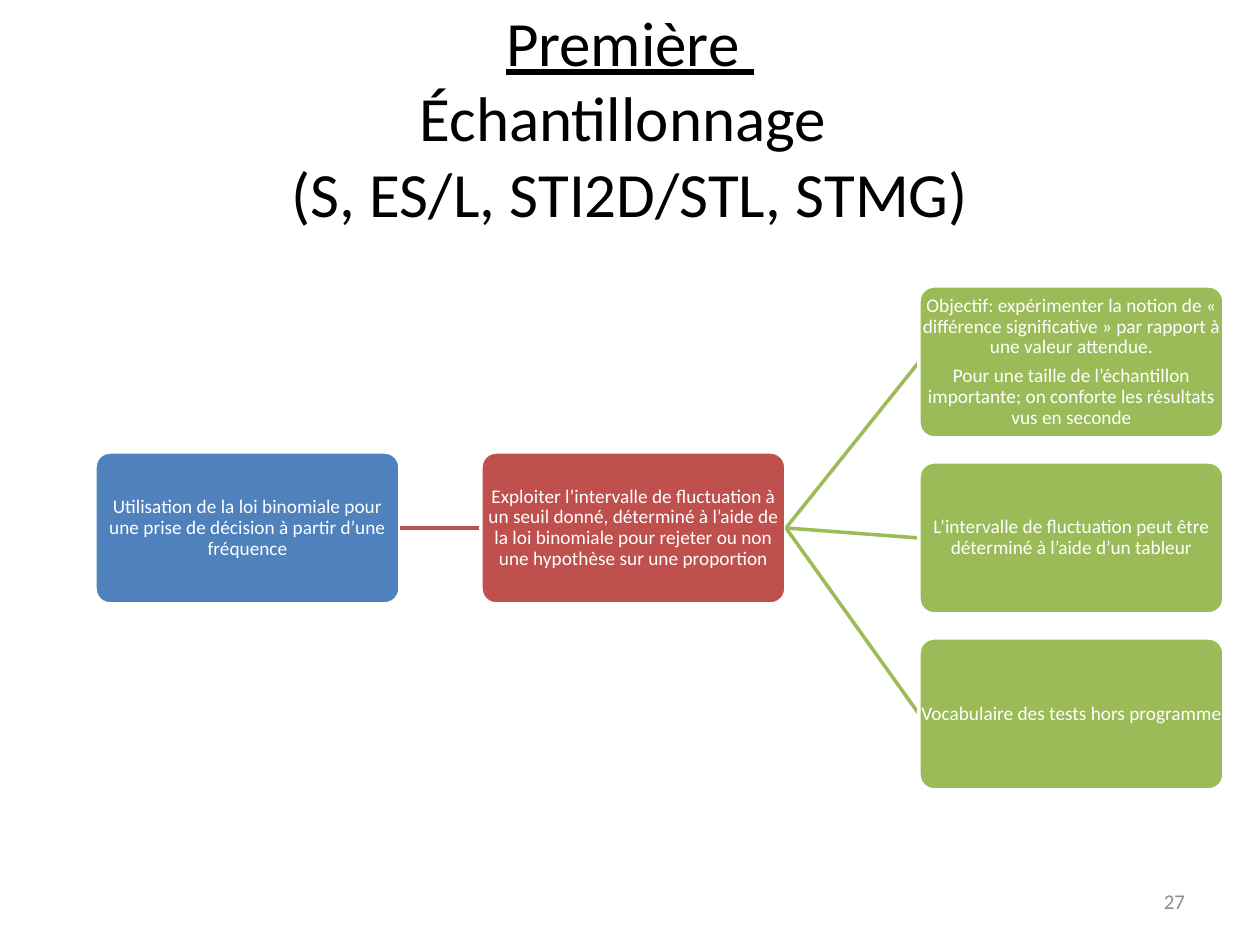
import dataclasses

import pptx
import pptx.dml.color
import pptx.enum.shapes
import pptx.enum.text
import pptx.oxml
import pptx.oxml.ns
import pptx.util

PX = 914400 / 126
BOX_WIDTH, BOX_HEIGHT = 305, 152
ROOT_LEFT, METHOD_LEFT, DETAIL_LEFT = 95, 481, 919
MAIN_TOP, DETAIL_TOP, DETAIL_PITCH = 452, 286, 176

ROOT = ["Utilisation de la loi binomiale pour une prise de décision à partir d’une fréquence"]
METHOD = [
    "Exploiter l’intervalle de fluctuation à un seuil donné, déterminé à l’aide de "
    "la loi binomiale pour rejeter ou non une hypothèse sur une proportion"
]
DETAILS = [
    [
        "Objectif: expérimenter la notion de « différence significative » "
        "par rapport à une valeur attendue.",
        "Pour une taille de l’échantillon importante; on conforte les résultats vus en seconde",
    ],
    ["L’intervalle de fluctuation peut être déterminé à l’aide d’un tableur"],
    ["Vocabulaire des tests hors programme"],
]


@dataclasses.dataclass(frozen=True)
class Theme:
    """Colours, font and type sizes of the slide."""

    font: str = "Calibri"
    black: str = "000000"
    white: str = "FFFFFF"
    blue: str = "4F81BD"
    red: str = "C0504D"
    green: str = "9BBB59"
    gray: str = "8C8C8C"
    title_size: int = 36
    box_size: int = 11
    number_size: int = 12
    line_width: int = 2


THEME = Theme()


def px(value):
    """Turn whole pixels into EMU."""
    return pptx.util.Emu(round(value * PX))


def rgb(value):
    """Turn a hex string into a colour."""
    return pptx.dml.color.RGBColor.from_string(value)


def format_para(para, size, color, alignment):
    """Set the font and alignment of a paragraph."""
    para.alignment = alignment
    para.font.name = THEME.font
    para.font.size = pptx.util.Pt(size)
    para.font.color.rgb = rgb(color)


def add_label(slide, place, texts, size, color, alignment, margin):
    """Add a wrapped, vertically centred text box and return its paragraphs."""
    frame = slide.shapes.add_textbox(*map(px, place)).text_frame
    frame.word_wrap = True
    frame.vertical_anchor = pptx.enum.text.MSO_ANCHOR.MIDDLE
    frame.margin_left = frame.margin_right = px(margin)
    frame.margin_top = frame.margin_bottom = px(margin)
    frame.text = "\n".join(texts)
    for para in frame.paragraphs:
        format_para(para, size, color, alignment)
    return frame.paragraphs


def add_box(slide, left, top, texts, color):
    """Add a rounded box of the tree with its label."""
    place = (left, top, BOX_WIDTH, BOX_HEIGHT)
    box = slide.shapes.add_shape(
        pptx.enum.shapes.MSO_SHAPE.ROUNDED_RECTANGLE, *map(px, place)
    )
    box.adjustments[0] = 0.1
    box.shadow.inherit = False
    box.fill.solid()
    box.fill.fore_color.rgb = rgb(color)
    box.line.color.rgb = rgb(THEME.white)
    box.line.width = pptx.util.Pt(THEME.line_width)
    center = pptx.enum.text.PP_ALIGN.CENTER
    for para in add_label(slide, place, texts, THEME.box_size, THEME.white, center, 1):
        para.line_spacing = 0.9
        para.space_after = pptx.util.Pt(4.5)


def add_branch(slide, parent_left, parent_top, left, top, color):
    """Join the right side of a parent box to the left side of its child."""
    middle = BOX_HEIGHT // 2
    ends = (parent_left + BOX_WIDTH, parent_top + middle, left, top + middle)
    branch = slide.shapes.add_connector(
        pptx.enum.shapes.MSO_CONNECTOR.STRAIGHT, *map(px, ends)
    )
    branch.line.color.rgb = rgb(color)
    branch.line.width = pptx.util.Pt(THEME.line_width)
    effects = pptx.oxml.parse_xml(f"<a:effectLst {pptx.oxml.ns.nsdecls('a')}/>")
    branch._element.spPr.append(effects)


def fill_title(slide):
    """Fill the title placeholder with its three lines."""
    title = slide.shapes.title
    title.left, title.top, title.width, title.height = map(px, (63, 38, 1134, 157))
    frame = title.text_frame
    frame.auto_size = pptx.enum.text.MSO_AUTO_SIZE.NONE
    frame.vertical_anchor = pptx.enum.text.MSO_ANCHOR.MIDDLE
    para = frame.paragraphs[0]
    format_para(para, THEME.title_size, THEME.black, pptx.enum.text.PP_ALIGN.CENTER)
    level = para.add_run()
    level.text = "Première "
    level.font.underline = True
    for line in ("Échantillonnage ", "(S, ES/L, STI2D/STL, STMG)"):
        para.add_line_break()
        para.add_run().text = line


def add_tree(slide):
    """Add the boxes from left to right with the lines that join them."""
    add_box(slide, ROOT_LEFT, MAIN_TOP, ROOT, THEME.blue)
    add_branch(slide, ROOT_LEFT, MAIN_TOP, METHOD_LEFT, MAIN_TOP, THEME.red)
    add_box(slide, METHOD_LEFT, MAIN_TOP, METHOD, THEME.red)
    for index, texts in enumerate(DETAILS):
        top = DETAIL_TOP + index * DETAIL_PITCH
        add_branch(slide, METHOD_LEFT, MAIN_TOP, DETAIL_LEFT, top, THEME.green)
        add_box(slide, DETAIL_LEFT, top, texts, THEME.green)


def main():
    """Build and save the slide."""
    deck = pptx.Presentation()
    deck.slide_width, deck.slide_height = px(1260), px(945)
    slide = deck.slides.add_slide(deck.slide_layouts[5])
    fill_title(slide)
    add_tree(slide)
    right = pptx.enum.text.PP_ALIGN.RIGHT
    add_label(slide, (903, 876, 294, 50), ["27"], THEME.number_size, THEME.gray, right, 12)
    deck.save("out.pptx")


if __name__ == "__main__":
    main()
